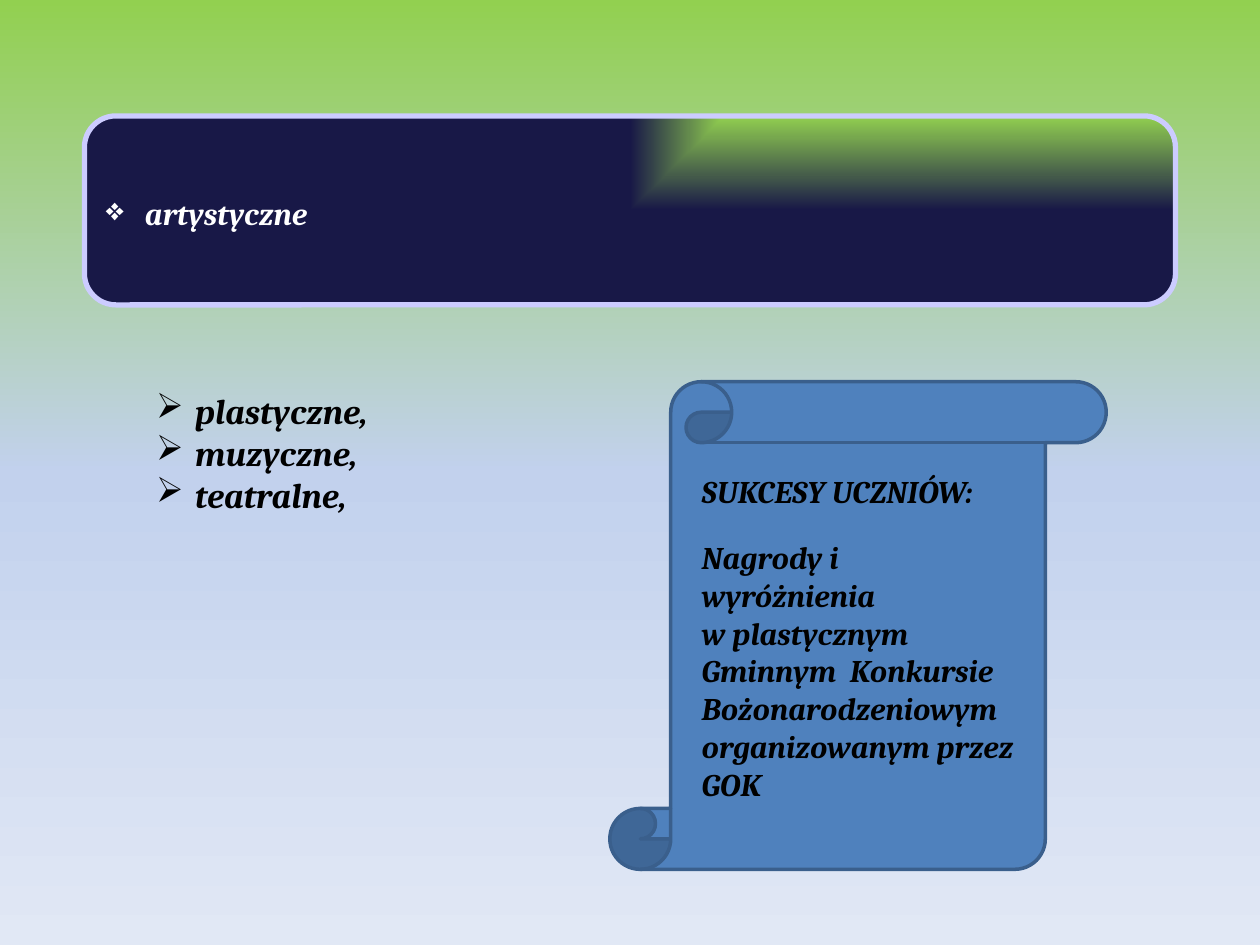
from lxml import etree
from pptx import Presentation
from pptx.dml.color import RGBColor
from pptx.enum.shapes import MSO_SHAPE as Shape
from pptx.enum.text import MSO_ANCHOR as Anchor, MSO_AUTO_SIZE as AutoSize, PP_ALIGN as Align
from pptx.oxml.ns import qn
from pptx.util import Inches, Pt

# Content
HEADING = ["artystyczne"]
ACTIVITIES = ["plastyczne,", "muzyczne,", "teatralne,"]
AWARDS_TITLE = ["SUKCESY UCZNIÓW:"]
AWARDS = [
    "Nagrody i wyróżnienia",
    "w plastycznym Gminnym  Konkursie",
    "Bożonarodzeniowym",
    "organizowanym przez GOK",
]

# Format
FONT = "Cambria"
BLACK = RGBColor(0x00, 0x00, 0x00)
WHITE = RGBColor(0xFF, 0xFF, 0xFF)
GREEN = RGBColor(0x92, 0xD0, 0x50)
NAVY = RGBColor(0x18, 0x18, 0x47)
LAVENDER = RGBColor(0xCC, 0xCC, 0xFF)
SKY = RGBColor(0xC2, 0xD1, 0xED)
PALE = RGBColor(0xE1, 0xE8, 0xF5)
BLUE = RGBColor(0x4F, 0x81, 0xBD)
DARK_BLUE = RGBColor(0x3A, 0x5F, 0x8C)
BULLET_INDENT = Inches(0.31)


def set_gradient(owner, fill, stops, direction, **attributes):
    """Fill with (percent, colour) stops; direction is the a:lin or a:path tag."""
    fill.gradient()
    gradient = next(owner.iter(qn("a:gradFill")))
    for child in list(gradient):
        gradient.remove(child)
    stop_list = etree.SubElement(gradient, qn("a:gsLst"))
    for percent, color in stops:
        stop = etree.SubElement(stop_list, qn("a:gs"), pos=str(percent * 1000))
        etree.SubElement(stop, qn("a:srgbClr"), val=str(color))
    return etree.SubElement(gradient, qn(direction), **attributes)


def write_text(shape, lines, size=18, color=BLACK, bullet=None, spacing=None):
    frame = shape.text_frame
    for index, line in enumerate(lines):
        paragraph = frame.add_paragraph() if index else frame.paragraphs[0]
        paragraph.alignment = Align.LEFT
        if spacing:
            paragraph.line_spacing = spacing
        if bullet:
            properties = paragraph._p.get_or_add_pPr()
            properties.set("marL", str(BULLET_INDENT))
            properties.set("indent", str(-BULLET_INDENT))
            etree.SubElement(properties, qn("a:buChar"), char=bullet)
        run = paragraph.add_run()
        run.text = line
        font = run.font
        font.name, font.size = FONT, Pt(size)
        font.bold = font.italic = True
        font.color.rgb = color


def add_shape(kind, box, line_color, line_width):
    shape = slide.shapes.add_shape(kind, *map(Inches, box))
    shape.shadow.inherit = False
    shape.line.color.rgb = line_color
    shape.line.width = Pt(line_width)
    return shape


def add_text_box(box, lines, **text_format):
    text_box = slide.shapes.add_textbox(*map(Inches, box))
    text_box.text_frame.word_wrap = True
    text_box.text_frame.auto_size = AutoSize.SHAPE_TO_FIT_TEXT
    write_text(text_box, lines, **text_format)


presentation = Presentation()
presentation.slide_width, presentation.slide_height = Inches(10), Inches(7.5)
slide = presentation.slides.add_slide(presentation.slide_layouts[6])

# Background
set_gradient(slide._element, slide.background.fill,
             [(0, GREEN), (50, SKY), (100, PALE)], "a:lin", ang="5400000", scaled="0")

# Heading banner, lit from its top right corner
banner = add_shape(Shape.ROUNDED_RECTANGLE, (0.67, 0.92, 8.66, 1.5), LAVENDER, 3)
glow = set_gradient(banner._element, banner.fill,
                    [(0, GREEN), (100, NAVY)], "a:path", path="rect")
etree.SubElement(glow, qn("a:fillToRect"), l="100000", b="100000")
banner.text_frame.word_wrap = False
banner.text_frame.vertical_anchor = Anchor.MIDDLE
write_text(banner, HEADING, color=WHITE, bullet="❖", spacing=1.15)

# Activities
add_text_box((1.14, 3.04, 4.65, 1.72), ACTIVITIES, size=20, bullet="➢")

# Scroll with the awards
scroll = add_shape(Shape.VERTICAL_SCROLL, (4.84, 3.03, 3.94, 3.87), DARK_BLUE, 2)
scroll.fill.solid()
scroll.fill.fore_color.rgb = BLUE
add_text_box((5.47, 3.7, 2.68, 0.4), AWARDS_TITLE)
add_text_box((5.47, 4.22, 2.68, 2.22), AWARDS)

presentation.save("out.pptx")
